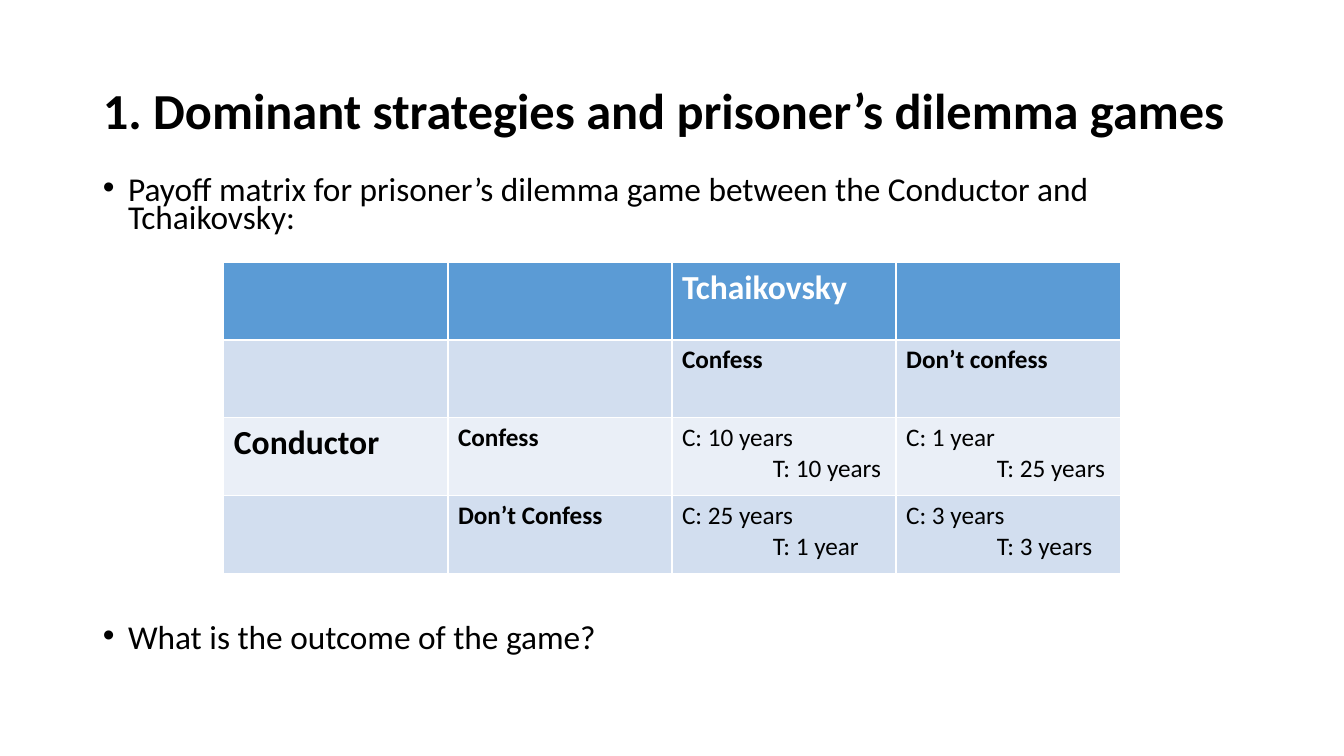
from dataclasses import dataclass

from pptx import Presentation
from pptx import util as u
from pptx.dml.color import RGBColor
from pptx.enum import text
from pptx.oxml import parse_xml
from pptx.oxml.ns import nsdecls

# Content
TITLE = "1. Dominant strategies and prisoner’s dilemma games"
BULLETS = [  # wording, space before in points
    ("Payoff matrix for prisoner’s dilemma game between the Conductor and Tchaikovsky:", 10),
    ("What is the outcome of the game?", 280),
]
# Each cell holds (style, lines); a second line is indented
MATRIX = [
    [None, None, ("header", ["Tchaikovsky"]), None],
    [None, None, ("strategy", ["Confess"]), ("strategy", ["Don’t confess"])],
    [("player", ["Conductor"]), ("strategy", ["Confess"]),
     ("payoff", ["C: 10 years", "T: 10 years"]), ("payoff", ["C: 1 year", "T: 25 years"])],
    [None, ("strategy", ["Don’t Confess"]),
     ("payoff", ["C: 25 years", "T: 1 year"]), ("payoff", ["C: 3 years", "T: 3 years"])],
]


@dataclass(frozen=True)
class Theme:
    font: str = "Calibri"
    ink: str = "000000"
    white: str = "FFFFFF"
    header: str = "5B9BD5"
    bands: tuple = ("EAEFF7", "D2DEEF")
    title: float = 36
    body: float = 23.8
    name: float = 24
    cell: float = 18


theme = Theme()
CELL_STYLES = {  # size, colour, bold
    "header": (theme.name, theme.white, True),
    "player": (theme.name, theme.ink, True),
    "strategy": (theme.cell, theme.ink, True),
    "payoff": (theme.cell, theme.ink, False),
}


def add_span(para, wording, size, colour, bold):
    span = para.add_run()
    span.text = wording
    span.font.name = theme.font
    span.font.size = u.Pt(size)
    span.font.bold = bold
    span.font.color.rgb = RGBColor.from_string(colour)


def place(box, left, top, width, height):
    box.left, box.top = u.Inches(left), u.Inches(top)
    box.width, box.height = u.Inches(width), u.Inches(height)


def set_indent(para, left, first=0):
    properties = para._p.get_or_add_pPr()
    properties.set("marL", str(u.Inches(left)))
    properties.set("indent", str(u.Inches(first)))
    return properties


def paragraph(frame, index):
    return frame.add_paragraph() if index else frame.paragraphs[0]


deck = Presentation()
deck.slide_width, deck.slide_height = u.Inches(13.33), u.Inches(7.5)
page = deck.slides.add_slide(deck.slide_layouts[1])

# Title
title = page.shapes.title
place(title, 0.92, 0.4, 11.5, 1.45)
title.text_frame.auto_size = text.MSO_AUTO_SIZE.NONE
title.text_frame.vertical_anchor = text.MSO_ANCHOR.MIDDLE
para = title.text_frame.paragraphs[0]
para.alignment = text.PP_ALIGN.LEFT
para.line_spacing = 0.9
add_span(para, TITLE, theme.title, theme.ink, True)

# Bullets above and below the matrix
body = page.placeholders[1]
place(body, 0.92, 1.73, 11.5, 5.02)
body.text_frame.auto_size = text.MSO_AUTO_SIZE.NONE
for index, (wording, gap) in enumerate(BULLETS):
    para = paragraph(body.text_frame, index)
    para.line_spacing = 0.7
    para.space_before = u.Pt(gap)
    properties = set_indent(para, 0.25, -0.25)
    properties.append(parse_xml(f'<a:buFont {nsdecls("a")} typeface="Arial"/>'))
    properties.append(parse_xml(f'<a:buChar {nsdecls("a")} char="•"/>'))
    add_span(para, wording, theme.body, theme.ink, False)

# Payoff matrix
matrix = page.shapes.add_table(
    len(MATRIX), len(MATRIX[0]),
    u.Inches(2.22), u.Inches(2.6), u.Inches(8.89), u.Inches(3.09)).table
for row, cells in enumerate(MATRIX):
    fill = theme.bands[row % 2] if row else theme.header
    for column, content in enumerate(cells):
        cell = matrix.cell(row, column)
        cell.fill.solid()
        cell.fill.fore_color.rgb = RGBColor.from_string(fill)
        if content is None:
            continue
        style, lines = content
        for index, wording in enumerate(lines):
            para = paragraph(cell.text_frame, index)
            set_indent(para, 0.9 * index)
            add_span(para, wording, *CELL_STYLES[style])

deck.save("out.pptx")
